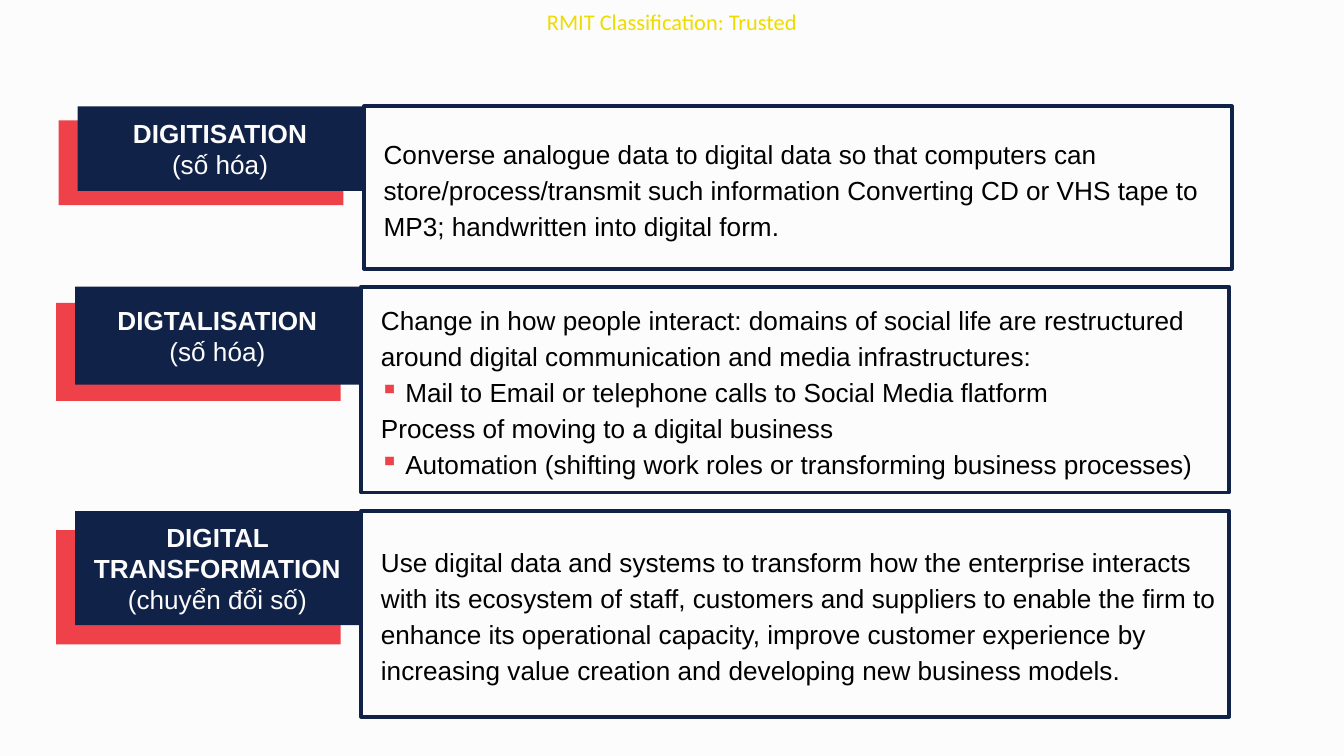
from lxml.etree import SubElement
from pptx import Presentation
from pptx.dml.color import RGBColor
from pptx.enum.shapes import MSO_SHAPE as Shape
from pptx.enum.text import MSO_ANCHOR as Anchor, PP_ALIGN as Align
from pptx.oxml.ns import qn
from pptx.util import Cm, Pt

NAVY, RED, PAPER, BLACK, YELLOW = "112248", "EF4149", "FCFCFC", "000000", "EEDC00"
BULLET = "▪"
PANEL_SHIFT, PANEL_WIDTH = 5.41, 16.4
LABEL_WIDTH = 5.38

# label left, top, label height, panel height, term, translation, [(bulleted, text)]
CONCEPTS = [
    (1.47, 2.01, 1.6, 3.07, "DIGITISATION", "(số hóa)", [
        (False, "Converse analogue data to digital data so that computers can "
                "store/process/transmit such information Converting CD or VHS tape to "
                "MP3; handwritten into digital form."),
    ]),
    (1.42, 5.42, 1.85, 3.89, "DIGTALISATION", "(số hóa)", [
        (False, "Change in how people interact: domains of social life are restructured "
                "around digital communication and media infrastructures:"),
        (True, "Mail to Email or telephone calls to Social Media flatform"),
        (False, "Process of moving to a digital business"),
        (True, "Automation (shifting work roles or transforming business processes)"),
    ]),
    (1.42, 9.66, 2.16, 3.89, "DIGITAL TRANSFORMATION", "(chuyển đổi số)", [
        (False, "Use digital data and systems to transform how the enterprise interacts "
                "with its ecosystem of staff, customers and suppliers to enable the firm to "
                "enhance its operational capacity, improve customer experience by "
                "increasing value creation and developing new business models."),
    ]),
]


def color(value):
    return RGBColor.from_string(value)


def add_run(paragraph, text, ink, size=14, font="Arial", bold=False):
    run = paragraph.add_run()
    run.text = text
    run.font.name, run.font.size, run.font.bold = font, Pt(size), bold
    run.font.color.rgb = color(ink)


def next_paragraph(frame, index):
    return frame.add_paragraph() if index else frame.paragraphs[0]


def add_block(shapes, left, top, width, height, fill=None, outline=None):
    block = shapes.add_shape(Shape.RECTANGLE, Cm(left), Cm(top), Cm(width), Cm(height))
    block.shadow.inherit = False
    if fill:
        block.fill.solid()
        block.fill.fore_color.rgb = color(fill)
    else:
        block.fill.background()
    if outline:
        block.line.color.rgb = color(outline)
        block.line.width = Pt(2)
    else:
        block.line.fill.background()
    return block


def set_indent(paragraph, bulleted):
    props = paragraph._p.get_or_add_pPr()
    props.set("marL", str(Cm(0.51 if bulleted else 0.05)))
    props.set("indent", str(Cm(-0.48 if bulleted else 0)))
    if bulleted:
        bullet_color = SubElement(props, qn("a:buClr"))
        SubElement(bullet_color, qn("a:srgbClr"), val=RED)
        SubElement(props, qn("a:buChar"), char=BULLET)
    paragraph.line_spacing = 1.15


def add_label(slide, left, top, width, height, term, translation):
    """Navy label over a red block offset down and to the left."""
    shapes = slide.shapes.add_group_shape().shapes
    add_block(shapes, left - 0.36, top + height / 6, width, height, fill=RED)
    label = add_block(shapes, left, top, width, height, fill=NAVY)
    frame = label.text_frame
    frame.word_wrap = True
    frame.vertical_anchor = Anchor.MIDDLE
    for index, text in enumerate((term, translation)):
        paragraph = next_paragraph(frame, index)
        paragraph.alignment = Align.CENTER
        add_run(paragraph, text, PAPER, bold=index == 0)


def add_panel(slide, left, top, width, height, lines):
    """Outlined panel with the explanation of one concept."""
    shapes = slide.shapes.add_group_shape().shapes
    add_block(shapes, left, top, width, height, outline=NAVY)
    explanation = shapes.add_textbox(Cm(left + 0.07), Cm(top), Cm(width), Cm(height))
    frame = explanation.text_frame
    frame.word_wrap = True
    frame.vertical_anchor = Anchor.MIDDLE
    frame.margin_left = frame.margin_right = Cm(0.25)
    frame.margin_top = frame.margin_bottom = Cm(0.25)
    for index, (bulleted, text) in enumerate(lines):
        paragraph = next_paragraph(frame, index)
        set_indent(paragraph, bulleted)
        add_run(paragraph, text, BLACK)


def add_classification(slide, left, top, width, height):
    marking = slide.shapes.add_textbox(Cm(left), Cm(top), Cm(width), Cm(height))
    frame = marking.text_frame
    frame.word_wrap = True
    frame.vertical_anchor = Anchor.MIDDLE
    frame.margin_left = frame.margin_right = frame.margin_top = frame.margin_bottom = 0
    frame.paragraphs[0].alignment = Align.CENTER
    add_run(frame.paragraphs[0], "RMIT Classification: Trusted", YELLOW, 12, "Calibri")


def main():
    deck = Presentation()
    deck.slide_width, deck.slide_height = Cm(25.4), Cm(14.29)
    slide = deck.slides.add_slide(deck.slide_layouts[6])
    slide.background.fill.solid()
    slide.background.fill.fore_color.rgb = color(PAPER)

    add_classification(slide, 9.83, 0, 5.74, 0.81)
    for left, top, label_height, panel_height, term, translation, lines in CONCEPTS:
        add_label(slide, left, top, LABEL_WIDTH, label_height, term, translation)
        add_panel(slide, left + PANEL_SHIFT, top, PANEL_WIDTH, panel_height, lines)
    deck.save("out.pptx")


if __name__ == "__main__":
    main()
